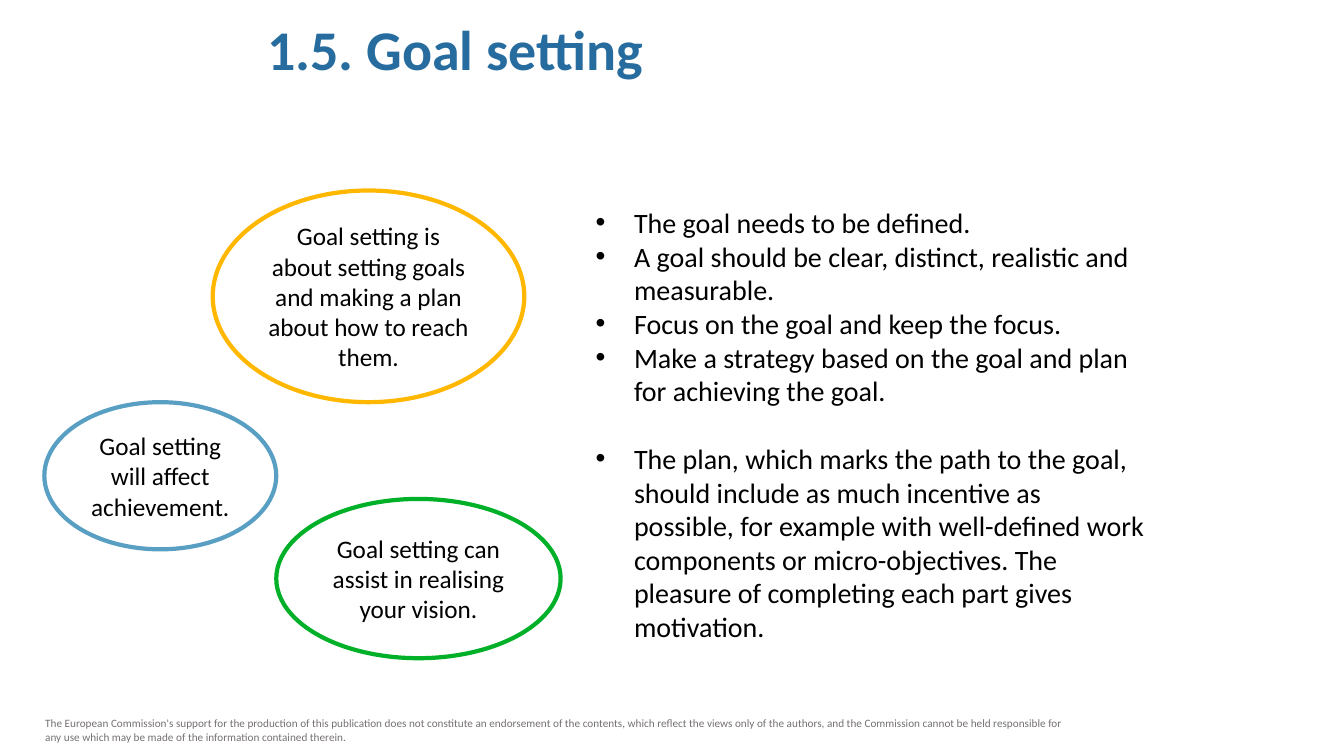
from pptx import Presentation
from pptx.dml.color import RGBColor
from pptx.enum.shapes import MSO_SHAPE
from pptx.enum.text import MSO_ANCHOR, PP_ALIGN
from pptx.oxml.ns import qn
from pptx.util import Inches, Pt

OVAL = MSO_SHAPE.OVAL
MIDDLE = MSO_ANCHOR.MIDDLE
CENTER = PP_ALIGN.CENTER
LEFT = PP_ALIGN.LEFT
FONT = "Calibri"
BLACK = "000000"
BULLET_INDENT = 0.38

# Left, top, width, height in inches; outline colour; statement
GOAL_BUBBLES = [
    ((2.74, 4.95, 2.82, 1.58), "00B028",
     "Goal setting can assist in realising your vision."),
    ((0.44, 3.99, 2.3, 1.46), "599FC3",
     "Goal setting will affect achievement."),
    ((2.11, 1.89, 3.09, 2.1), "FFB700",
     "Goal setting is about setting goals and making a plan about how to reach them."),
]

# Space before in points; guideline
GUIDELINES = [
    (0, "The goal needs to be defined."),
    (0, "A goal should be clear, distinct, realistic and measurable."),
    (0, "Focus on the goal and keep the focus."),
    (0, "Make a strategy based on the goal and plan for achieving the goal."),
    (24.4, "The plan, which marks the path to the goal, should include as much "
           "incentive as possible, for example with well-defined work components "
           "or micro-objectives. The pleasure of completing each part gives "
           "motivation."),
]

DISCLAIMER = (
    "The European Commission's support for the production of this publication "
    "does not constitute an endorsement of the contents, which reflect the views "
    "only of the authors, and the Commission cannot be held responsible for any "
    "use which may be made of the information contained therein."
)


def color(hex_code):
    return RGBColor.from_string(hex_code)


def add_text(paragraph, text, size, hex_code, align=LEFT, bold=False):
    paragraph.alignment = align
    run = paragraph.add_run()
    run.text = text
    run.font.name = FONT
    run.font.size = Pt(size)
    run.font.bold = bold
    run.font.color.rgb = color(hex_code)


def add_text_frame(slide, box):
    frame = slide.shapes.add_textbox(*map(Inches, box)).text_frame
    frame.word_wrap = True
    return frame


def add_bullet(paragraph):
    properties = paragraph._p.get_or_add_pPr()
    properties.set("marL", str(Inches(BULLET_INDENT)))
    properties.set("indent", str(-Inches(BULLET_INDENT)))
    bullet_font = properties.makeelement(qn("a:buFont"), {"typeface": "Arial"})
    bullet = properties.makeelement(qn("a:buChar"), {"char": "•"})
    properties.extend([bullet_font, bullet])


def add_disclaimer(slide, box):
    frame = add_text_frame(slide, box)
    add_text(frame.paragraphs[0], DISCLAIMER, 8, "767171")


def add_title(slide, box):
    frame = add_text_frame(slide, box)
    add_text(frame.paragraphs[0], "1.5. Goal setting", 40, "266C9F", CENTER, True)


def add_guidelines(slide, box):
    frame = add_text_frame(slide, box)
    for index, (gap, guideline) in enumerate(GUIDELINES):
        paragraph = frame.add_paragraph() if index else frame.paragraphs[0]
        if gap:
            paragraph.space_before = Pt(gap)
        add_bullet(paragraph)
        add_text(paragraph, guideline, 20, BLACK)


def add_goal_bubble(slide, box, outline, statement):
    bubble = slide.shapes.add_shape(OVAL, *map(Inches, box))
    bubble.shadow.inherit = False
    bubble.fill.solid()
    bubble.fill.fore_color.rgb = color("FFFFFF")
    bubble.line.color.rgb = color(outline)
    bubble.line.width = Pt(3)
    frame = bubble.text_frame
    frame.word_wrap = True
    frame.vertical_anchor = MIDDLE
    add_text(frame.paragraphs[0], statement, 18, BLACK, CENTER)


def main():
    presentation = Presentation()
    presentation.slide_width = Inches(13.33)
    presentation.slide_height = Inches(7.5)
    slide = presentation.slides.add_slide(presentation.slide_layouts[6])

    # Footer and heading
    add_disclaimer(slide, (0.35, 7.06, 10.46, 0.37))
    add_title(slide, (1.45, 0.09, 6.13, 0.77))

    # Guidelines on the right, statements on the left
    add_guidelines(slide, (5.81, 1.99, 5.65, 4.81))
    for box, outline, statement in GOAL_BUBBLES:
        add_goal_bubble(slide, box, outline, statement)

    presentation.save("out.pptx")


if __name__ == "__main__":
    main()
